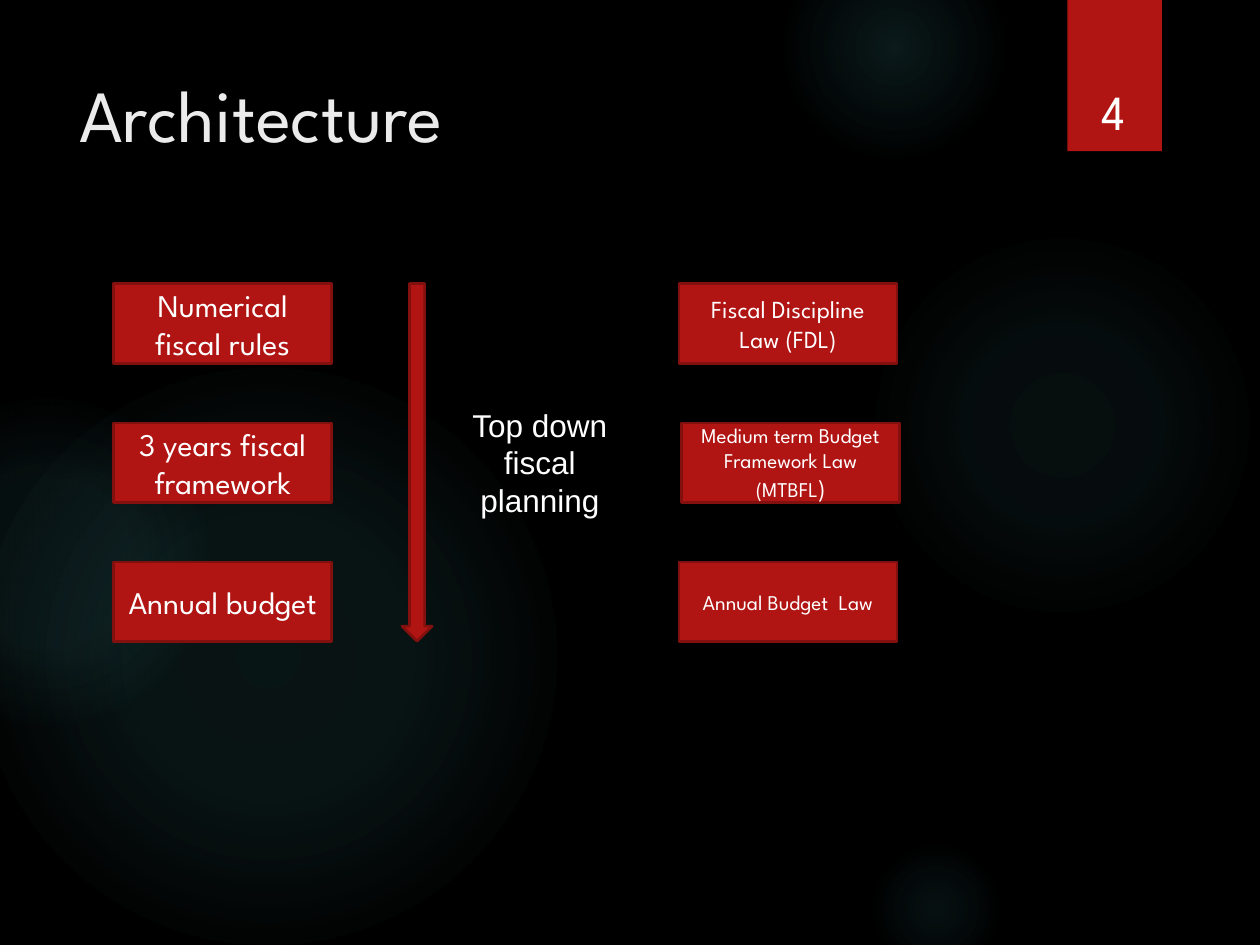
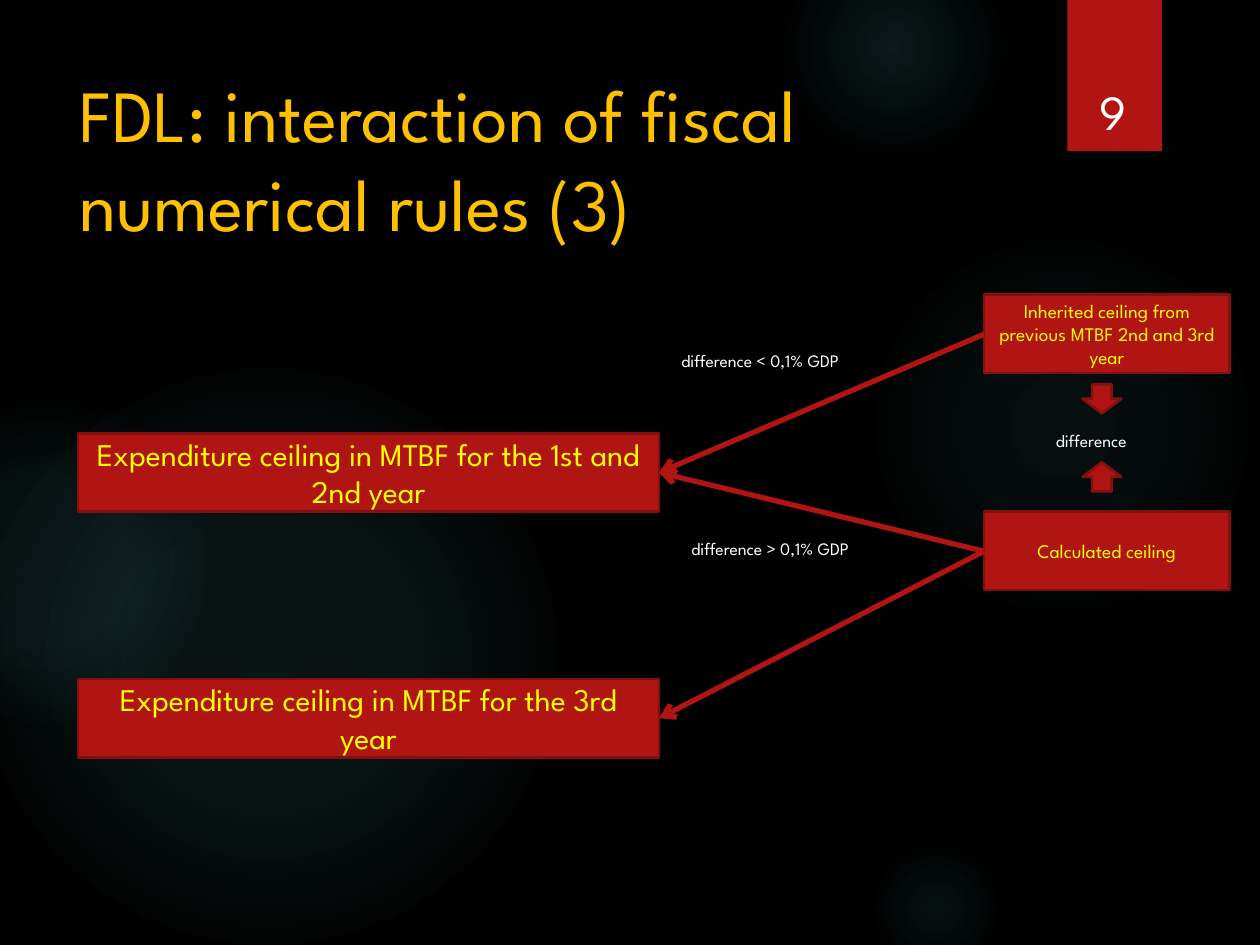
from lxml import etree
from pptx import Presentation
from pptx.dml.color import RGBColor
from pptx.enum import shapes, text
from pptx.oxml import parse_xml
from pptx.oxml.ns import nsdecls, qn
from pptx.util import Pt

FONT = "League Spartan"
RED, DARK, WHITE, YELLOW = "B01513", "82100E", "FFFFFF", "FFFF00"
GLOW = "50B9C1"
MSO = shapes.MSO_SHAPE
CENTER, LEFT = text.PP_ALIGN.CENTER, text.PP_ALIGN.LEFT


def rgb(hex_colour):
    return RGBColor.from_string(hex_colour)


def add(s, kind, box, words="", size=18, colour=WHITE, font=FONT, align=CENTER):
    box = [Pt(v) for v in box]
    if kind is None:
        sp = s.shapes.add_textbox(*box)
    else:
        sp = s.shapes.add_shape(kind, *box)
        sp.shadow.inherit = False
        sp.fill.solid()
        sp.fill.fore_color.rgb = rgb(RED)
        sp.line.color.rgb = rgb(DARK)
        sp.line.width = Pt(1.5)
    if words:
        tf = sp.text_frame
        tf.word_wrap = True
        tf.text = words
        p = tf.paragraphs[0]
        p.alignment = align
        p.font.name = font
        p.font.size = Pt(size)
        p.font.color.rgb = rgb(colour)
    return sp


prs = Presentation()
prs.slide_width, prs.slide_height = Pt(720), Pt(540)
bg = prs.slide_master.background.fill
bg.solid()
bg.fore_color.rgb = rgb("000000")
layout = prs.slide_layouts[5]

slides = []
for title, colour, number in [
    ("Architecture", "EBEBEB", "4"),
    ("FDL: interaction of fiscal numerical rules (3)", "FFC000", "9"),
]:
    s = prs.slides.add_slide(layout)
    t = s.shapes.title
    t.left, t.top, t.width, t.height = Pt(38), Pt(36), Pt(556), Pt(110)
    tf = t.text_frame
    tf.text = title
    tf.word_wrap = True
    tf.auto_size = text.MSO_AUTO_SIZE.NONE
    tf.vertical_anchor = text.MSO_ANCHOR.TOP
    p = tf.paragraphs[0]
    p.alignment = LEFT
    p.font.name = FONT
    p.font.size = Pt(42)
    p.font.color.rgb = rgb(colour)
    sp = add(s, None, (611.3, 23, 49.7, 60.5), number, 28)
    sp.text_frame.vertical_anchor = text.MSO_ANCHOR.BOTTOM
    slides.append(s)
s1, s2 = slides

decor = []
for x, y, d, stops in [
    (496, 132, 222, [(0, 7), (36, 6), (69, 0)]),
    (448, -36, 126, [(0, 14), (36, 7), (73, 0)]),
    (496, 480, 78, [(0, 9), (36, 5), (66, 0)]),
    (-12, 210, 330, [(0, 11), (36, 10), (75, 0)]),
    (-66, 228, 186, [(0, 8), (36, 8), (72, 0)]),
]:
    sp = add(s1, MSO.OVAL, (x, y, d, d))
    sp.line.fill.background()
    gs = "".join(
        f'<a:gs pos="{pos * 1000}"><a:srgbClr val="{GLOW}">'
        f'<a:alpha val="{alpha * 1000}"/></a:srgbClr></a:gs>'
        for pos, alpha in stops
    )
    grad = parse_xml(
        f'<a:gradFill {nsdecls("a")}><a:gsLst>{gs}</a:gsLst><a:path path="circle">'
        '<a:fillToRect l="50000" t="50000" r="50000" b="50000"/></a:path></a:gradFill>'
    )
    spPr = sp.element.spPr
    spPr.replace(spPr.find(qn("a:solidFill")), grad)
    decor.append(sp)

band = add(s1, MSO.RECTANGLE, (610, 0, 54, 86.4))
band.line.fill.background()
band.element.spPr.find(qn("a:effectLst")).append(parse_xml(
    f'<a:outerShdw {nsdecls("a")} blurRad="{Pt(3)}" dist="{Pt(2)}" dir="5400000" rotWithShape="0">'
    '<a:srgbClr val="000000"><a:alpha val="45000"/></a:srgbClr></a:outerShdw>'
))
decor.append(band)
for i, sp in enumerate(decor):
    sp.element.nvSpPr.cNvPr.set("id", str(20 + i))
    layout.shapes.element.insert(2 + i, sp.element)

for i, (rule, law, law_x, size) in enumerate([
    ("Numerical fiscal rules", "Fiscal Discipline Law (FDL)", 388, 14),
    ("3 years fiscal framework", "Medium term Budget Framework Law (MTBFL", 389.5, 12),
    ("Annual budget", "Annual Budget  Law", 388, 12),
]):
    y = 162.2 + 79.5 * i
    add(s1, MSO.RECTANGLE, (65, y, 124.6, 45.4), rule)
    sp = add(s1, MSO.RECTANGLE, (law_x, y, 124.6, 45.4), law, size)
    if law.endswith("MTBFL"):
        r = sp.text_frame.paragraphs[0].add_run()
        r.text = ")"
        r.font.size = Pt(14)
add(s1, MSO.DOWN_ARROW, (229.7, 162, 17.3, 204.5))
add(s1, None, (252, 228.2, 113, 72.7), "Top down fiscal planning", font="Arial")

for x, y, w, size, words in [
    (562.3, 292.4, 140.4, 11, "Calculated ceiling"),
    (562.3, 168.5, 140.4, 11, "Inherited ceiling from previous MTBF 2nd and 3rd year"),
    (44.6, 388, 332, 18, "Expenditure ceiling in MTBF for the 3rd year"),
    (44.6, 247.6, 332, 18, "Expenditure ceiling in MTBF for the 1st and 2nd year"),
]:
    add(s2, MSO.RECTANGLE, (x, y, w, 44.8), words, size, YELLOW)

for y1, y2 in [(315, 410.4), (191, 270), (315, 270)]:
    c = s2.shapes.add_connector(
        shapes.MSO_CONNECTOR.STRAIGHT, Pt(562.3), Pt(y1), Pt(376.6), Pt(y2))
    c.line.color.rgb = rgb(RED)
    c.line.width = Pt(3)
    spPr = c.element.spPr
    etree.SubElement(spPr.find(qn("a:ln")), qn("a:tailEnd"), type="arrow")
    etree.SubElement(spPr, qn("a:effectLst"))

for x, y, w, words in [
    (596.2, 242, 73.4, "difference"),
    (382.3, 196.6, 129.6, "difference < 0,1% GDP"),
    (388, 303.8, 129.6, "difference > 0,1% GDP"),
]:
    add(s2, None, (x, y, w, 19.4), words, 10, align=LEFT)
for kind, y in [(MSO.UP_ARROW, 264.2), (MSO.DOWN_ARROW, 219.6)]:
    add(s2, kind, (618.5, y, 22.3, 16.6))

prs.save("out.pptx")
